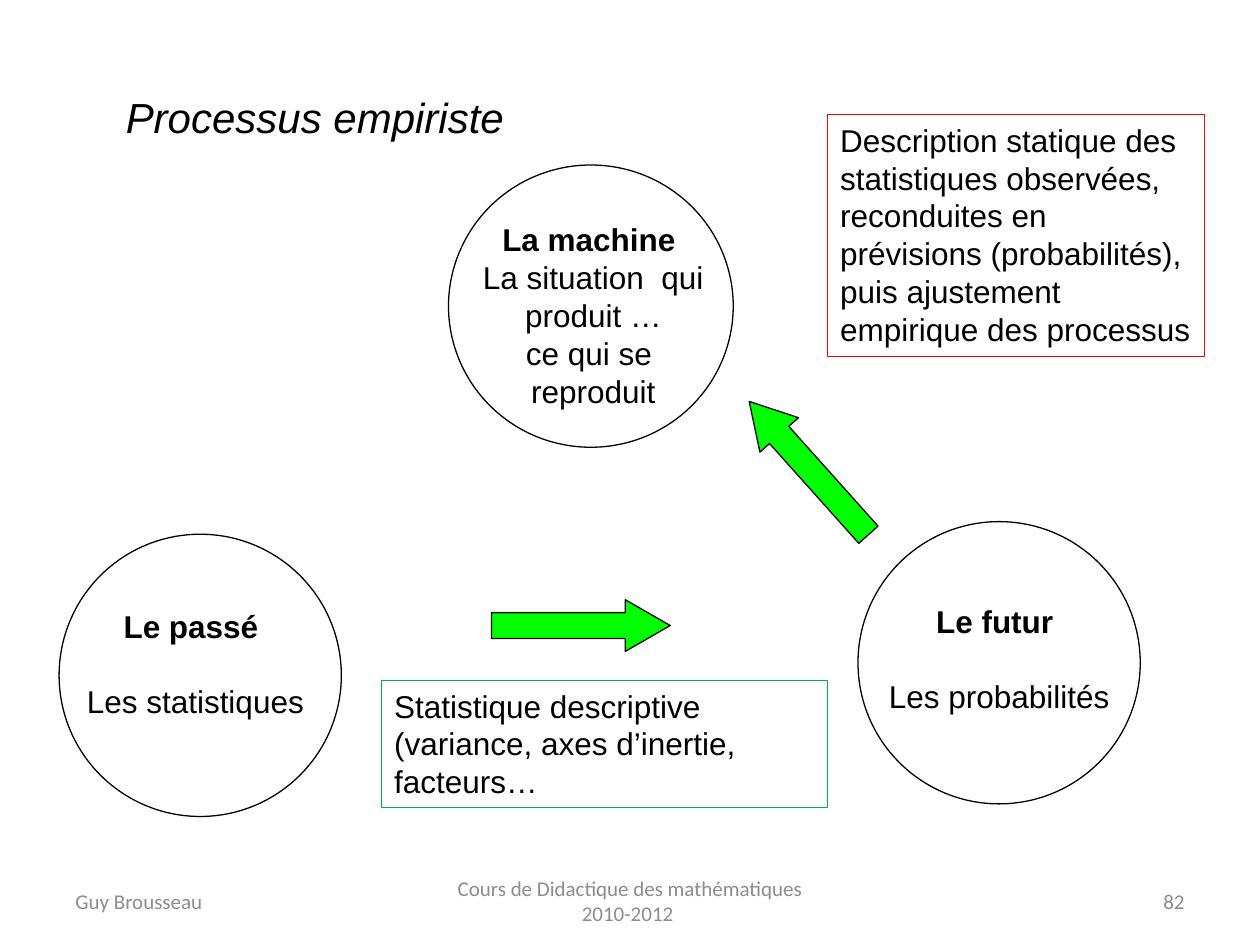
from pptx import Presentation
from pptx.dml.color import RGBColor
from pptx.enum import shapes, text
from pptx.util import Pt

BLACK = RGBColor(0x00, 0x00, 0x00)
WHITE = RGBColor(0xFF, 0xFF, 0xFF)
RED = RGBColor(0xFF, 0x00, 0x00)
LIME = RGBColor(0x00, 0xFF, 0x00)
GREEN = RGBColor(0x00, 0xB0, 0x50)
GREY = RGBColor(0x8C, 0x8C, 0x8C)
SHAPE = shapes.MSO_SHAPE
ALIGN = text.PP_ALIGN
ANCHOR = text.MSO_ANCHOR


def add_outline(slide, kind, box, fill=None, line=None):
    outline = slide.shapes.add_shape(kind, *map(Pt, box))
    outline.shadow.inherit = False
    if fill is None:
        outline.fill.background()
    else:
        outline.fill.solid()
        outline.fill.fore_color.rgb = fill
    if line is None:
        outline.line.fill.background()
    else:
        outline.line.color.rgb = line
        outline.line.width = Pt(0.75)
    return outline


def write(holder, lines, size=18, color=BLACK, font="Arial",
          align=ALIGN.LEFT, anchor=ANCHOR.TOP):
    frame = holder.text_frame
    frame.word_wrap = True
    frame.vertical_anchor = anchor
    frame.text = "\n".join(lines)
    for paragraph in frame.paragraphs:
        paragraph.alignment = align
        paragraph.font.size = Pt(size)
        paragraph.font.name = font
        paragraph.font.color.rgb = color
    return frame.paragraphs


def add_stage(slide, box, label_offset, label_height, heading, lines, gap=0):
    left, top, width, height = box
    dx, dy = label_offset
    label = add_outline(slide, SHAPE.RECTANGLE,
                        (left + dx, top + dy, width, label_height), WHITE)
    paragraphs = write(label, [heading, *lines], align=ALIGN.CENTER)
    paragraphs[0].font.bold = True
    paragraphs[1].space_before = Pt(gap)
    add_outline(slide, SHAPE.OVAL, box, line=BLACK)


def add_arrow(slide, left, top, rotation=0):
    arrow = add_outline(slide, SHAPE.RIGHT_ARROW, (left, top, 102.2, 29.5), LIME, BLACK)
    arrow.adjustments[1] = 0.87
    arrow.rotation = rotation


def add_title(slide, box, title):
    holder = slide.shapes.add_textbox(*map(Pt, box))
    write(holder, [title], size=24)[0].font.italic = True


def add_remark(slide, box, remark, color):
    write(add_outline(slide, SHAPE.RECTANGLE, box, line=color), [remark])


def add_footer(slide, box, author, course, number):
    left, top, width, height = box
    side, middle = 168, 228
    columns = [
        (left, side, author, ALIGN.LEFT),
        (left + (width - middle) / 2, middle, course, ALIGN.CENTER),
        (left + width - side, side, number, ALIGN.RIGHT),
    ]
    for x, column_width, content, align in columns:
        holder = slide.shapes.add_textbox(Pt(x), Pt(top), Pt(column_width), Pt(height))
        write(holder, [content], 12, GREY, "Calibri", align, ANCHOR.MIDDLE)


def main():
    deck = Presentation()
    deck.slide_width, deck.slide_height = Pt(720), Pt(540)
    slide = deck.slides.add_slide(deck.slide_layouts[6])

    add_stage(slide, (33.8, 305.3, 161.3, 161.3), (-2.8, 38.1), 87.8,
              "Le passé ", ["Les statistiques"], gap=21)
    add_stage(slide, (256.3, 94.3, 162.7, 161.3), (1.4, 28.1), 117.4,
              "La machine ",
              ["La situation  qui produit …", "ce qui se ", "reproduit"])
    add_stage(slide, (490.3, 298.1, 161.3, 161.3), (0, 42.5), 87.8,
              "Le futur ", ["Les probabilités"], gap=21)
    add_arrow(slide, 411.1, 252.7, rotation=228.2)
    add_arrow(slide, 280.8, 342.7)
    add_title(slide, (64.8, 49, 249.8, 36), "Processus empiriste")
    add_remark(slide, (473, 65.5, 215.3, 138.2),
               "Description statique des statistiques observées, reconduites en "
               "prévisions (probabilités), puis ajustement empirique des processus", RED)
    add_remark(slide, (218.2, 388.8, 254.9, 72.7),
               "Statistique descriptive (variance, axes d’inertie, facteurs…", GREEN)
    add_footer(slide, (36, 500.4, 648, 28.8), "Guy Brousseau",
               "Cours de Didactique des mathématiques 2010-2012 ", "82")

    deck.save("out.pptx")


if __name__ == "__main__":
    main()
